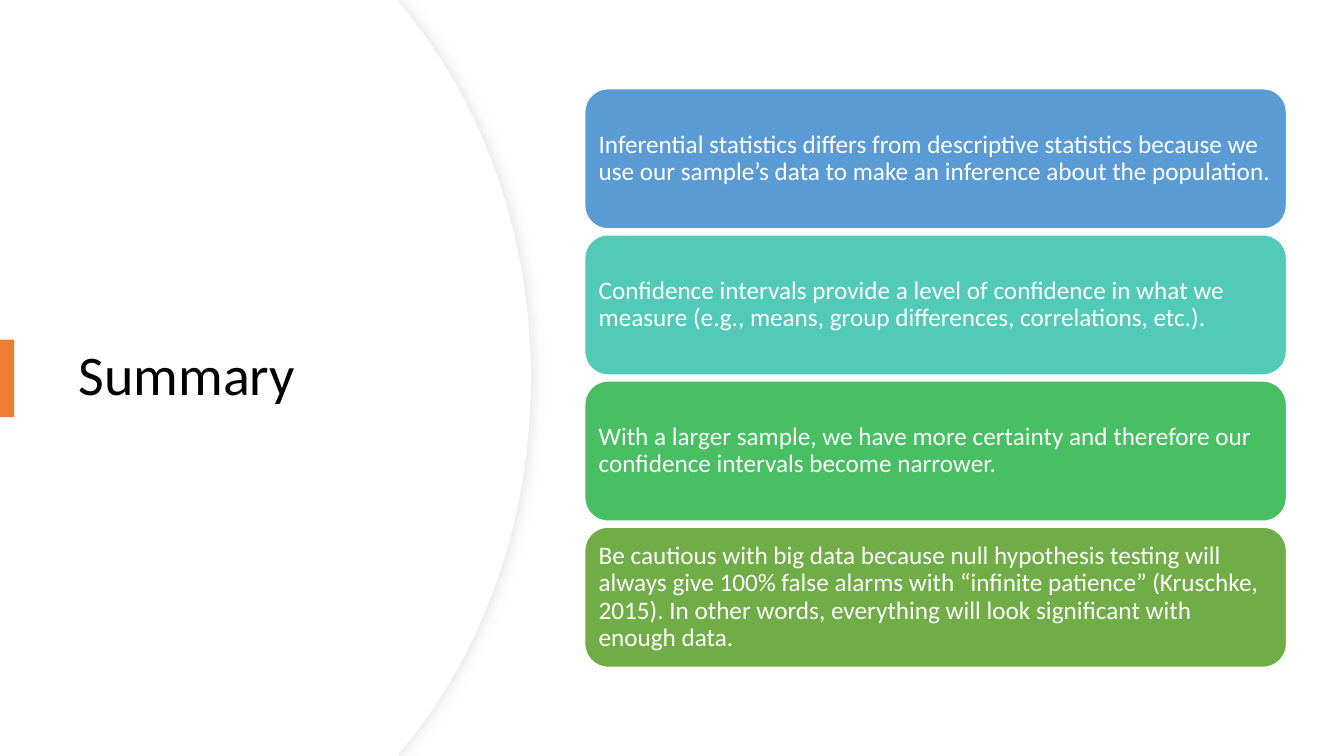
from dataclasses import dataclass
from lxml.etree import SubElement
from pptx import Presentation
from pptx.dml.color import RGBColor
from pptx.enum.shapes import MSO_SHAPE as Shape
from pptx.enum.text import MSO_ANCHOR as Anchor, PP_ALIGN as Align
from pptx.oxml.ns import qn
from pptx.util import Inches, Pt

TITLE = "Summary"
CARDS = [
    ("5B9BD5", "Inferential statistics differs from descriptive statistics because we "
               "use our sample’s data to make an inference about the population."),
    ("52CAB8", "Confidence intervals provide a level of confidence in what we measure "
               "(e.g., means, group differences, correlations, etc.)."),
    ("49BF64", "With a larger sample, we have more certainty and therefore our "
               "confidence intervals become narrower."),
    ("70AD47", "Be cautious with big data because null hypothesis testing will always "
               "give 100% false alarms with “infinite patience” (Kruschke, 2015). "
               "In other words, everything will look significant with enough data."),
]


@dataclass(frozen=True)
class Theme:
    font: str = "Calibri"
    head: int = 40
    body: int = 18
    ink: str = "000000"
    paper: str = "FFFFFF"
    edge: str = "EFEFEF"
    shade: str = "D9D9D9"
    accent: str = "ED7D31"


THEME = Theme()
WIDE, HIGH = 13.33, 7.5
LEFT, TOP, CARD_W, CARD_H, STEP = 5.8, 0.88, 6.96, 1.39, 1.45
PAD = 0.07


def paint(shape, fill, line=None, width=1):
    shape.shadow.inherit = False
    shape.fill.solid()
    shape.fill.fore_color.rgb = RGBColor.from_string(fill)
    if line:
        shape.line.color.rgb = RGBColor.from_string(line)
        shape.line.width = Pt(width)
    else:
        shape.line.fill.background()


def write(shape, text, size, color):
    frame = shape.text_frame
    frame.text = text
    frame.word_wrap = True
    frame.vertical_anchor = Anchor.MIDDLE
    para = frame.paragraphs[0]
    para.alignment = Align.LEFT
    para.line_spacing = 0.9
    para.font.name = THEME.font
    para.font.size = Pt(size)
    para.font.color.rgb = RGBColor.from_string(color)
    return frame


def panel(slide, right):
    """Draw a panel whose right edge is two mirrored Bezier curves."""
    upper = [(3.94, 0), (right - 1.26, 0.08), (right - 0.48, 1.02), (right, 2.32)]
    lower = [(x, HIGH - y) for x, y in reversed(upper)]
    points = [*upper, (right, HIGH / 2), *lower, (0, HIGH)]
    pen = slide.shapes.build_freeform(0, 0, scale=1.0)
    pen.add_line_segments([(Inches(x), Inches(y)) for x, y in points], close=True)
    shape = pen.convert_to_shape()
    lines = list(shape.element.iter(qn("a:lnTo")))
    for start in (2, 5):
        first, *others = lines[start:start + 3]
        curve = SubElement(first.getparent(), qn("a:cubicBezTo"))
        first.addprevious(curve)
        for line in (first, *others):
            curve.append(line[0])
            line.getparent().remove(line)
    return shape


def cast(shape):
    """Give the shape a soft shadow to its right."""
    effects = shape.element.spPr.find(qn("a:effectLst"))
    outer = SubElement(effects, qn("a:outerShdw"), blurRad=str(Pt(7)),
                       dist=str(Pt(3)), dir="0", algn="l", rotWithShape="0")
    tint = SubElement(outer, qn("a:srgbClr"), val=THEME.shade)
    SubElement(tint, qn("a:alpha"), val="50000")


def main():
    deck = Presentation()
    deck.slide_width, deck.slide_height = Inches(WIDE), Inches(HIGH)
    slide = deck.slides.add_slide(deck.slide_layouts[5])
    shapes = slide.shapes

    rim = panel(slide, 5.27)
    paint(rim, THEME.paper, THEME.edge, 0.75)
    cast(rim)
    paint(panel(slide, 5.26), THEME.paper)

    title = shapes.title
    title.left, title.top = Inches(0.68), Inches(1.27)
    title.width, title.height = Inches(3.94), Inches(4.95)
    write(title, TITLE, THEME.head, THEME.ink)
    shapes.element.append(title.element)  # in front of the panels

    tab = shapes.add_shape(Shape.RECTANGLE, 0, Inches(3.37), Inches(0.14), Inches(0.77))
    paint(tab, THEME.accent)

    for row, (color, text) in enumerate(CARDS):
        card = shapes.add_shape(Shape.ROUNDED_RECTANGLE, Inches(LEFT),
                                Inches(TOP + row * STEP), Inches(CARD_W), Inches(CARD_H))
        paint(card, color, THEME.paper)
        frame = write(card, text, THEME.body, THEME.paper)
        frame.margin_left = frame.margin_right = Inches(PAD)
        frame.margin_top = frame.margin_bottom = Inches(PAD)

    deck.save("out.pptx")


if __name__ == "__main__":
    main()
